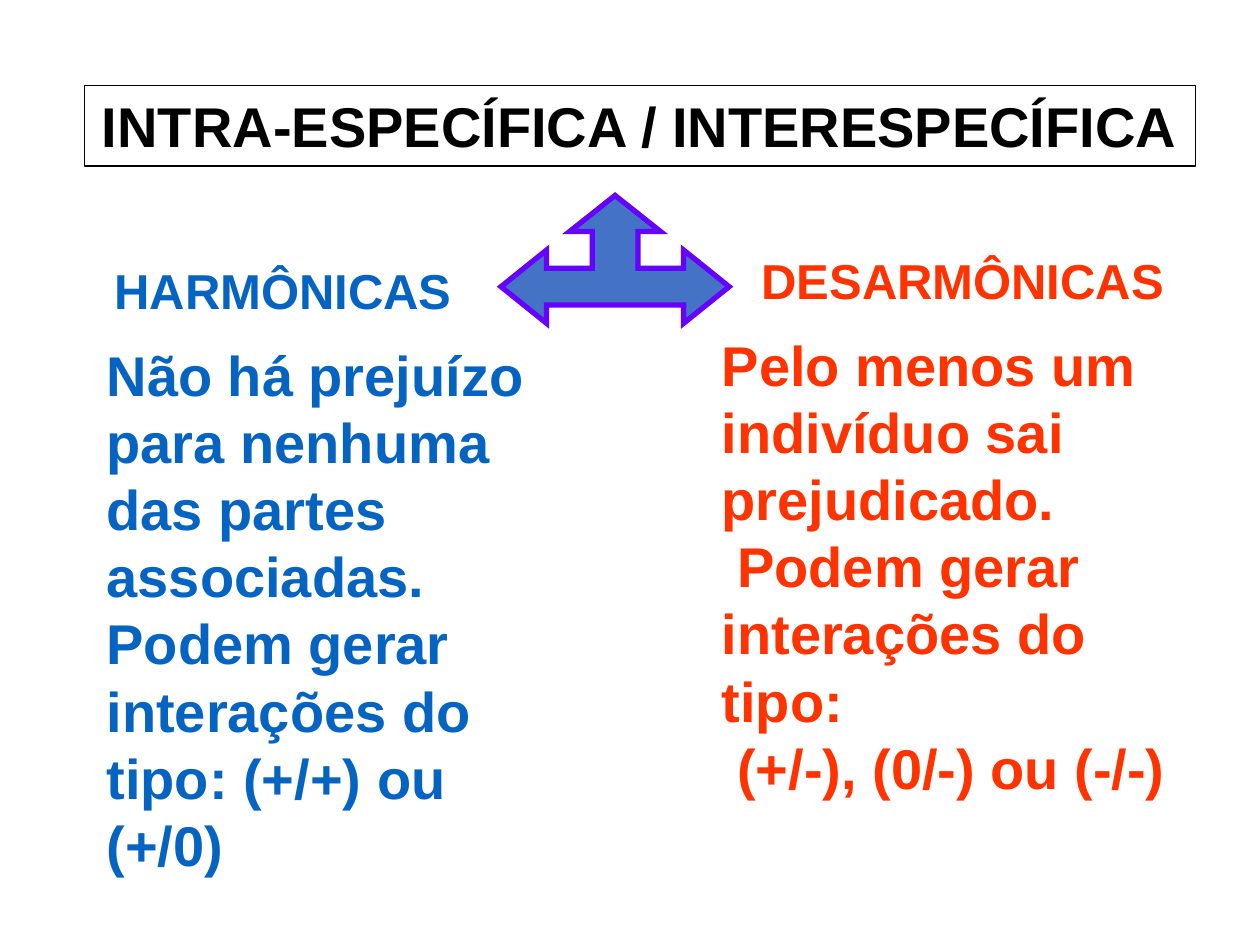
from pptx import Presentation
from pptx.dml.color import RGBColor
from pptx.enum import shapes, text
from pptx.oxml.ns import qn
from pptx.util import Cm, Pt
from lxml import etree

COLORS = {"black": "000000", "blue": "0563C1", "red": "FF3300",
          "arrow": "4472C4", "violet": "6600FF"}
FONT = "Arial"
CENTER, LEFT = text.PP_ALIGN.CENTER, text.PP_ALIGN.LEFT

# Content: paragraphs, (left, top, width, height) in cm, size, colour, alignment
TITLE = (["INTRA-ESPECÍFICA / INTERESPECÍFICA"],
         (1.7, 1.72, 22.4, 1.63), 32, "black", CENTER)
COLUMNS = [
    (["HARMÔNICAS"], (1.5, 5.13, 8.41, 1.45), 28, "blue", CENTER),
    (["DESARMÔNICAS"], (14.91, 4.93, 8.99, 1.45), 28, "red", CENTER),
    (["Pelo menos um indivíduo sai prejudicado.",
      " Podem gerar interações do tipo:",
      " (+/-), (0/-) ou (-/-)"],
     (14.3, 6.53, 9.8, 9.73), 32, "red", LEFT),
    (["Não há prejuízo para nenhuma das partes associadas. "
      "Podem gerar interações do tipo: (+/+) ou (+/0)"],
     (1.9, 6.73, 10.01, 9.73), 32, "blue", LEFT),
]

# Three-way arrow: tip, then the left half as (distance from axis, height) in cm
ARROW_AXIS, ARROW_TIP = 12.4, 3.94
ARROW_HALF = [(0.92, 4.67), (0.46, 4.67), (0.46, 5.41), (1.38, 5.41),
              (1.38, 5.04), (2.3, 5.78), (1.38, 6.52), (1.38, 6.15)]


def rgb(name):
    return RGBColor.from_string(COLORS[name])


def write(shape, paragraphs, size, color, align):
    frame = shape.text_frame
    frame.word_wrap = True
    frame.vertical_anchor = text.MSO_ANCHOR.TOP
    frame.text = "\n".join(paragraphs)
    for paragraph in frame.paragraphs:
        paragraph.alignment = align
        for run in paragraph.runs:
            run.font.name, run.font.size, run.font.bold = FONT, Pt(size), True
            run.font.color.rgb = rgb(color)


prs = Presentation()
prs.slide_width, prs.slide_height = Cm(25.4), Cm(19.05)
slide = prs.slides.add_slide(prs.slide_layouts[6])

# Framed title
paragraphs, box, *style = TITLE
title = slide.shapes.add_shape(shapes.MSO_SHAPE.RECTANGLE, *map(Cm, box))
title.shadow.inherit = False
title.fill.background()
title.line.color.rgb = rgb("black")
title.line.width = Pt(0.75)
write(title, paragraphs, *style)

# Headings and descriptions
for paragraphs, box, *style in COLUMNS:
    write(slide.shapes.add_textbox(*map(Cm, box)), paragraphs, *style)

# Arrow: the left half followed by its mirror image
outline = [(ARROW_AXIS - dx, y) for dx, y in ARROW_HALF]
outline += [(ARROW_AXIS + dx, y) for dx, y in reversed(ARROW_HALF)]
builder = slide.shapes.build_freeform(Cm(ARROW_AXIS), Cm(ARROW_TIP))
builder.add_line_segments([(Cm(x), Cm(y)) for x, y in outline], close=True)
arrow = builder.convert_to_shape()
arrow.shadow.inherit = False
arrow.fill.solid()
arrow.fill.fore_color.rgb = rgb("arrow")
arrow.line.color.rgb = rgb("violet")
arrow.line.width = Pt(3)
etree.SubElement(arrow.line._get_or_add_ln(), qn("a:miter"), lim="800000")

prs.save("out.pptx")
